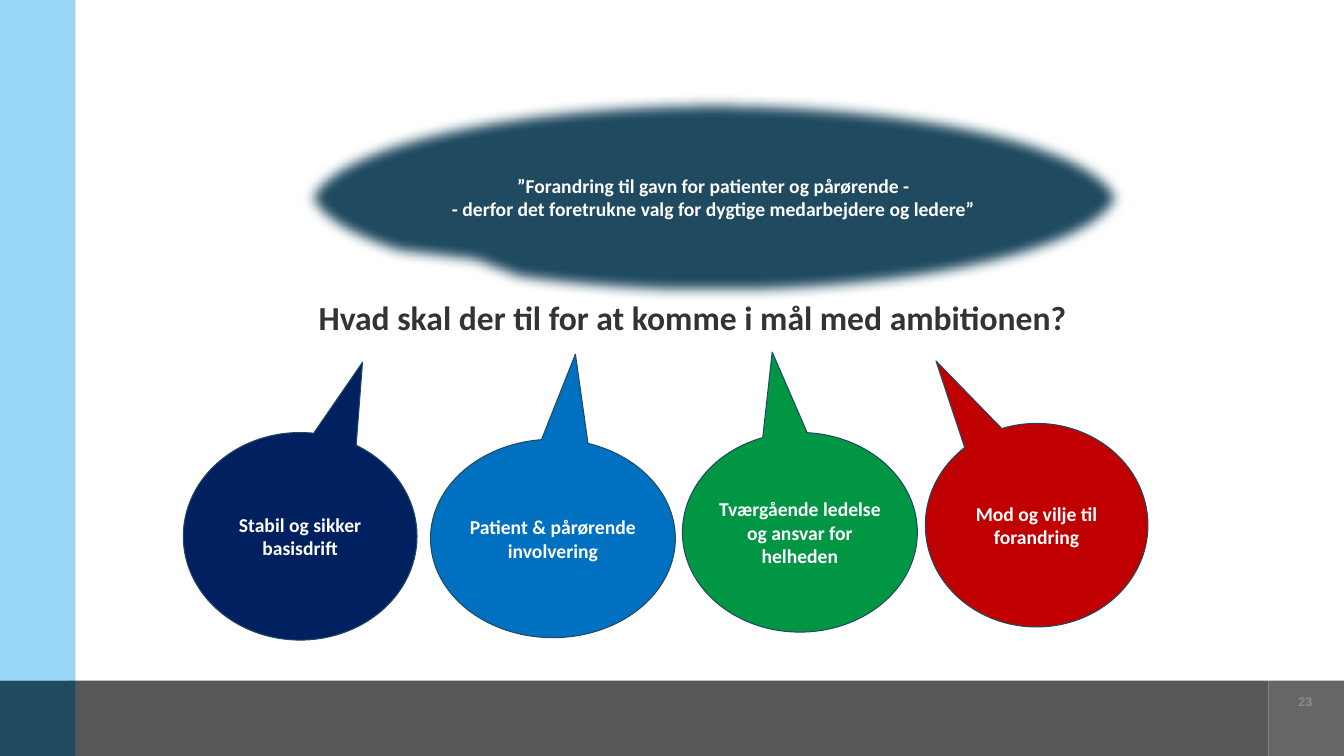
from pptx import Presentation
from pptx.dml.color import RGBColor
from pptx.enum.shapes import MSO_SHAPE
from pptx.enum.text import MSO_ANCHOR, PP_ALIGN
from pptx.oxml.ns import qn
from pptx.util import Cm, Pt
from lxml import etree

RECT = MSO_SHAPE.RECTANGLE
BUBBLE = MSO_SHAPE.OVAL_CALLOUT
TOP, MIDDLE, BOTTOM = MSO_ANCHOR.TOP, MSO_ANCHOR.MIDDLE, MSO_ANCHOR.BOTTOM
LEFT, CENTER = PP_ALIGN.LEFT, PP_ALIGN.CENTER

WHITE = RGBColor(0xFF, 0xFF, 0xFF)
INK = RGBColor(0x33, 0x33, 0x33)
MUTED = RGBColor(0x8C, 0x8C, 0x8C)
DARK = RGBColor(0x57, 0x57, 0x57)
GREY = RGBColor(0x66, 0x66, 0x66)
SKY = RGBColor(0x99, 0xD7, 0xF6)
TEAL = RGBColor(0x1F, 0x4A, 0x60)
NAVY = RGBColor(0x00, 0x20, 0x60)
GREEN = RGBColor(0x00, 0x96, 0x44)
RED = RGBColor(0xC0, 0x00, 0x00)
BLUE = RGBColor(0x00, 0x70, 0xC0)

WIDE, HIGH = 33.87, 19.05
EDGE = 1.9           # width of the side band, height of the footer
BASE = HIGH - EDGE   # top of the footer


def write(shape, lines, size, color, align=CENTER, anchor=MIDDLE,
          face="Calibri", space=1.0):
    frame = shape.text_frame
    look = {"word_wrap": True, "vertical_anchor": anchor, "margin_left": 0,
            "margin_right": 0, "margin_top": 0, "margin_bottom": 0}
    for name, value in look.items():
        setattr(frame, name, value)
    frame.text = "\n".join(lines)
    style = {"name": face, "size": Pt(size), "bold": True}
    for para in frame.paragraphs:
        para.alignment = align
        para.line_spacing = space
        for run in para.runs:
            for name, value in style.items():
                setattr(run.font, name, value)
            run.font.color.rgb = color


def block(slide, kind, box, fill):
    shape = slide.shapes.add_shape(kind, *map(Cm, box))
    shape.shadow.inherit = False
    shape.fill.solid()
    shape.fill.fore_color.rgb = fill
    shape.line.fill.background()
    return shape


def bubble(slide, box, tip, fill, lines):
    shape = block(slide, BUBBLE, box, fill)
    shape.adjustments[0], shape.adjustments[1] = tip
    shape.line.color.rgb = TEAL
    shape.line.width = Pt(0.75)
    write(shape, lines, 14, WHITE)
    return shape


def soften(shape, size):
    effects = shape.element.spPr.find(qn("a:effectLst"))
    etree.SubElement(effects, qn("a:softEdge"), rad=str(int(size)))


def label(slide, box, text, size, color, **look):
    write(slide.shapes.add_textbox(*map(Cm, box)), [text], size, color, **look)


def main():
    deck = Presentation()
    deck.slide_width, deck.slide_height = Cm(WIDE), Cm(HIGH)
    slide = deck.slides.add_slide(deck.slide_layouts[6])

    # Frame: footer and side band
    block(slide, RECT, (1.7, BASE, 30.27, EDGE), DARK)
    block(slide, RECT, (WIDE - EDGE, BASE, EDGE, EDGE), GREY)
    block(slide, RECT, (0, 0, EDGE, BASE), SKY)
    block(slide, RECT, (0, BASE, EDGE, EDGE), TEAL)

    # Title
    label(slide, (8.03, 6.91, 19.71, 1.6),
          "Hvad skal der til for at komme i mål med ambitionen?",
          24, INK, align=LEFT, anchor=BOTTOM, space=0.85)

    # Ambition with soft edges
    goal = bubble(slide, (7.54, 2.36, 20.88, 5.21), (-0.303, 0.351), TEAL,
                  ["”Forandring til gavn for patienter og pårørende -",
                   "- derfor det foretrukne valg for dygtige "
                   "medarbejdere og ledere”"])
    soften(goal, Pt(9))

    # Four answers
    for box, tip, fill, text in (
        ((4.62, 10.9, 5.89, 5.23), (0.267, -0.839), NAVY,
         "Stabil og sikker basisdrift"),
        ((17.2, 10.9, 5.92, 5.03), (-0.118, -0.903), GREEN,
         "Tværgående ledelse og ansvar for helheden"),
        ((23.32, 10.67, 5.61, 5.13), (-0.452, -0.807), RED,
         "Mod og vilje til forandring"),
        ((10.85, 11.07, 6.17, 5), (0.092, -0.929), BLUE,
         "Patient & pårørende involvering"),
    ):
        bubble(slide, box, tip, fill, [text])

    # Page number
    label(slide, (31.95, 17.48, EDGE, 0.51), "23", 9, MUTED,
          anchor=TOP, face="Arial")

    deck.save("out.pptx")


if __name__ == "__main__":
    main()
